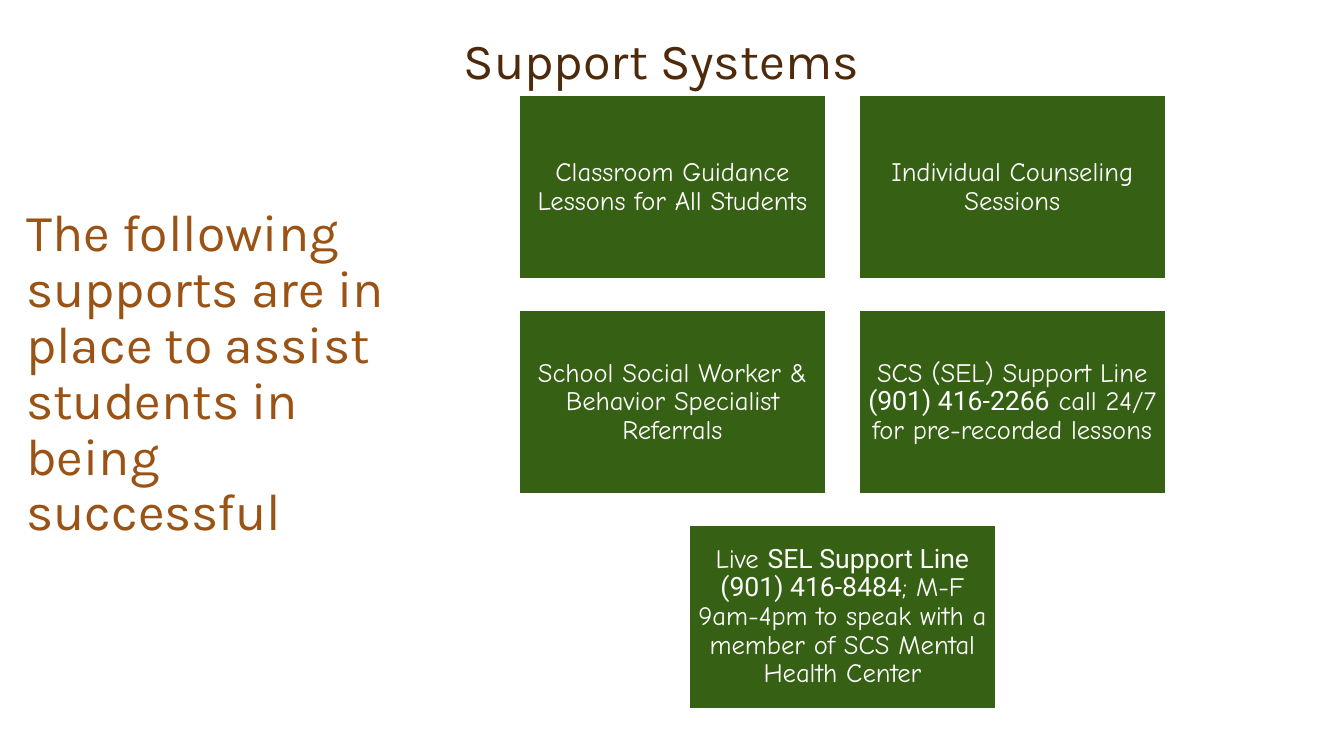
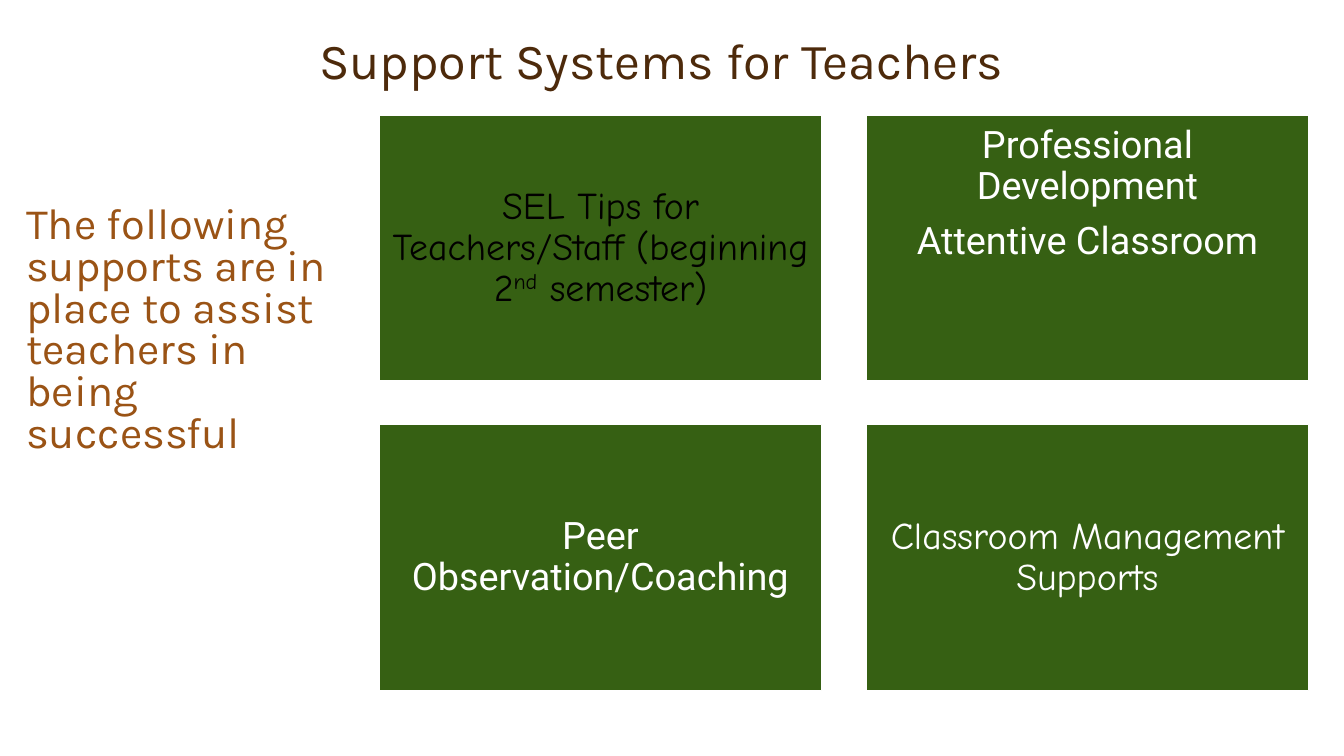
from lxml import etree
from pptx import Presentation
from pptx.dml.color import RGBColor
from pptx.enum.shapes import MSO_SHAPE
from pptx.enum.text import MSO_ANCHOR, MSO_AUTO_SIZE, PP_ALIGN
from pptx.oxml.ns import qn
from pptx.util import Inches, Pt

RECT = MSO_SHAPE.RECTANGLE
TOP, MIDDLE, BOTTOM = MSO_ANCHOR.TOP, MSO_ANCHOR.MIDDLE, MSO_ANCHOR.BOTTOM
LEFT, CENTER = PP_ALIGN.LEFT, PP_ALIGN.CENTER
FIXED = MSO_AUTO_SIZE.NONE

BROWN = RGBColor(0x4D, 0x2A, 0x0B)
RUST = RGBColor(0x9A, 0x53, 0x15)
GREEN = RGBColor(0x36, 0x60, 0x13)
WHITE = RGBColor(0xFF, 0xFF, 0xFF)
BLACK = RGBColor(0x01, 0x00, 0x00)
HEAD, HAND, PLAIN = "Karla", "Comic Neue", "Roboto"


def card(*paras, font=HAND, color=WHITE, anchor=MIDDLE):
    return {"paras": paras, "font": font, "color": color, "anchor": anchor}


SLIDES = [
    {
        "title": "Support Systems",
        "intro": "The following supports are in place to assist students "
                 "in being successful",
        "text": {"width": 4.17, "size": 37, "lead": 0.9},
        "grid": {"left": 5.15, "top": 0.95, "width": 3.04, "height": 1.82,
                 "gap_x": 0.33, "gap_y": 0.31, "size": 19, "inset": 0.08},
        "cards": [
            card(["Classroom Guidance Lessons for All Students"]),
            card(["Individual Counseling Sessions"]),
            card(["School Social Worker & Behavior Specialist Referrals"]),
            card(["SCS (SEL) Support Line",
                  (" (901) 416-2266", {"font": PLAIN}),
                  " call 24/7 for pre-recorded lessons"]),
            card(["Live ",
                  ("SEL Support Line (901) 416-8484", {"font": PLAIN}),
                  "; M-F 9am-4pm to speak with a member of SCS Mental "
                  "Health Center"]),
        ],
    },
    {
        "title": "Support Systems for Teachers",
        "intro": "The following supports are in place to assist teachers "
                 "in being successful",
        "text": {"width": 3.33, "size": 31, "lead": 0.8},
        "grid": {"left": 3.76, "top": 1.14, "width": 4.39, "height": 2.64,
                 "gap_x": 0.44, "gap_y": 0.43, "size": 27, "inset": 0.11},
        "cards": [
            card(["SEL Tips for Teachers/Staff (beginning 2",
                  ("nd", {"base": 30000}), " semester)"], color=BLACK),
            card(["Professional Development"], ["Attentive Classroom"],
                 font=PLAIN, anchor=TOP),
            card(["Peer Observation/Coaching"], font=PLAIN),
            card(["Classroom Management Supports"]),
        ],
    },
]


def style(para, font, size, color, align, lead=0.9):
    para.alignment = align
    para.line_spacing = lead
    para.space_before = Pt(0)
    para.font.name = font
    para.font.size = Pt(size)
    para.font.color.rgb = color


def place(shape, left, top, width, height, anchor):
    shape.left, shape.top = Inches(left), Inches(top)
    shape.width, shape.height = Inches(width), Inches(height)
    frame = shape.text_frame
    frame.word_wrap = True
    frame.auto_size = FIXED
    frame.vertical_anchor = anchor
    return frame


def add_head(slide, text):
    frame = place(slide.shapes.title, 1.06, 0, 11, 0.95, BOTTOM)
    frame.text = text
    style(frame.paragraphs[0], HEAD, 36, BROWN, CENTER)


def add_intro(slide, text, width, size, lead):
    frame = place(slide.placeholders[1], 0.16, 2, width, 3.15, TOP)
    frame.text = text
    para = frame.paragraphs[0]
    props = para._p.get_or_add_pPr()
    props.set("marL", "0")
    props.set("indent", "0")
    etree.SubElement(props, qn("a:buNone"))
    style(para, HEAD, size, RUST, LEFT, lead)


def add_card(slide, item, left, top, grid):
    size = grid["size"]
    shape = slide.shapes.add_shape(RECT, 0, 0, 0, 0)
    shape.shadow.inherit = False
    shape.fill.solid()
    shape.fill.fore_color.rgb = GREEN
    shape.line.color.rgb = WHITE
    shape.line.width = Pt(1)
    frame = place(shape, left, top, grid["width"], grid["height"],
                  item["anchor"])
    inset = Inches(grid["inset"])
    frame.margin_left = frame.margin_right = inset
    frame.margin_top = frame.margin_bottom = inset
    for num, parts in enumerate(item["paras"]):
        para = frame.add_paragraph() if num else frame.paragraphs[0]
        style(para, item["font"], size, item["color"], CENTER)
        para.space_after = Pt(round(size * 0.37))
        for part in parts:
            text, opts = (part, {}) if isinstance(part, str) else part
            run = para.add_run()
            run.text = text
            if "font" in opts:
                run.font.name = opts["font"]
            if "base" in opts:
                run._r.get_or_add_rPr().set("baseline", str(opts["base"]))


def add_grid(slide, cards, grid):
    step_x = grid["width"] + grid["gap_x"]
    step_y = grid["height"] + grid["gap_y"]
    for num, item in enumerate(cards):
        row, col = divmod(num, 2)
        if col == 0 and num == len(cards) - 1:
            col = 0.5
        add_card(slide, item, grid["left"] + col * step_x,
                 grid["top"] + row * step_y, grid)


def main():
    deck = Presentation()
    deck.slide_width, deck.slide_height = Inches(13.33), Inches(7.5)
    for data in SLIDES:
        slide = deck.slides.add_slide(deck.slide_layouts[1])
        add_head(slide, data["title"])
        add_intro(slide, data["intro"], **data["text"])
        add_grid(slide, data["cards"], data["grid"])
    deck.save("out.pptx")


if __name__ == "__main__":
    main()
